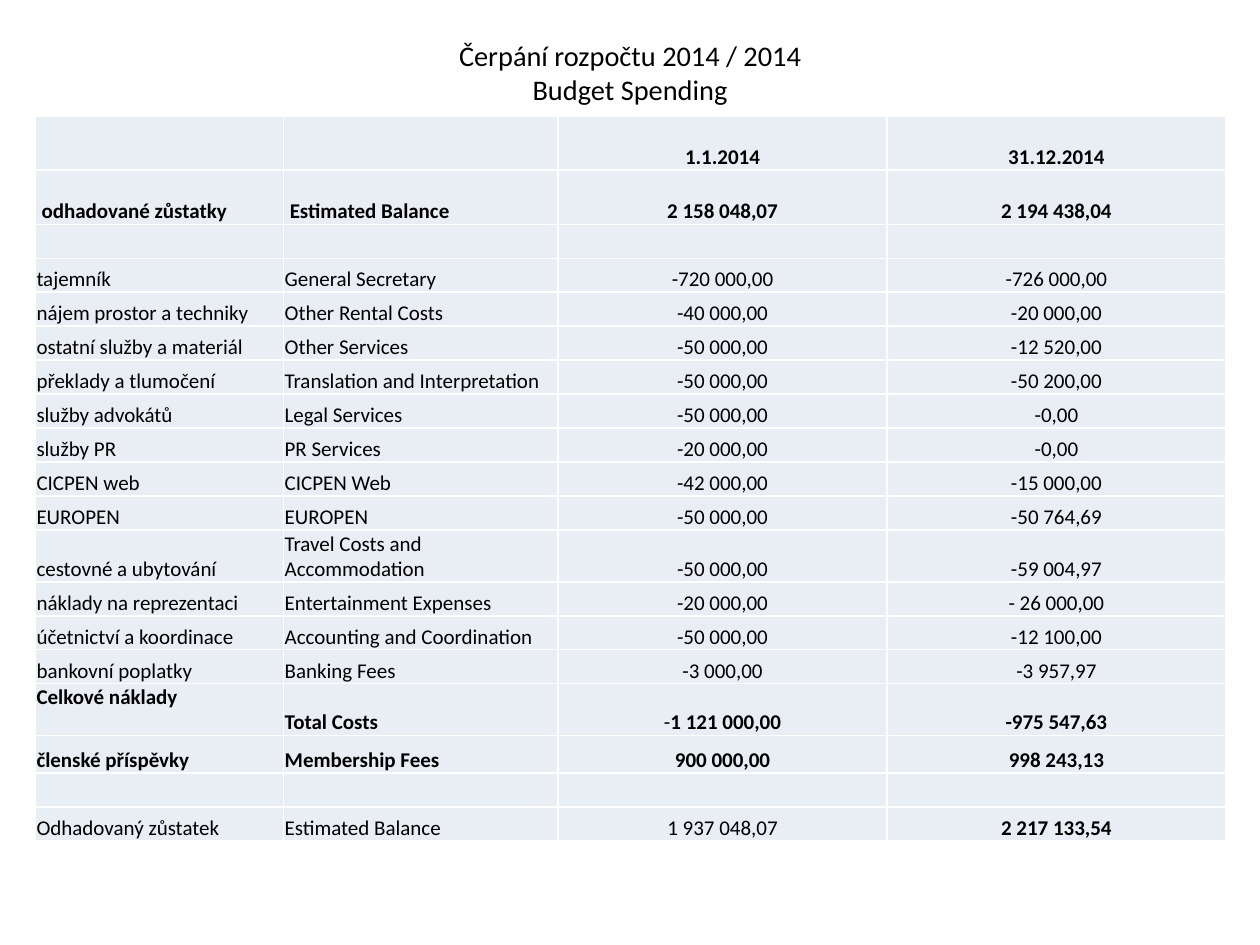
from lxml.etree import SubElement
from pptx import Presentation
from pptx.dml.color import RGBColor
from pptx.enum.text import MSO_ANCHOR as Anchor, PP_ALIGN as Align
from pptx.oxml.ns import qn
from pptx.util import Inches, Pt

BLACK = RGBColor(0x00, 0x00, 0x00)
WHITE = RGBColor(0xFF, 0xFF, 0xFF)
PALE_BLUE = RGBColor(0xE9, 0xED, 0xF4)

# Budget lines: Czech label, English label, start of year, end of year
HEADER = ["", "", "1.1.2014", "31.12.2014"]
OPENING = ["odhadované zůstatky", "Estimated Balance", "2 158 048,07", "2 194 438,04"]
EMPTY = [""] * 4
COSTS = [
    ["tajemník", "General Secretary", "-720 000,00", "-726 000,00"],
    ["nájem prostor a techniky", "Other Rental Costs", "-40 000,00", "-20 000,00"],
    ["ostatní služby a materiál", "Other Services", "-50 000,00", "-12 520,00"],
    ["překlady a tlumočení", "Translation and Interpretation", "-50 000,00", "-50 200,00"],
    ["služby advokátů", "Legal Services", "-50 000,00", "-0,00"],
    ["služby PR", "PR Services", "-20 000,00", "-0,00"],
    ["CICPEN web", "CICPEN Web", "-42 000,00", "-15 000,00"],
    ["EUROPEN", "EUROPEN", "-50 000,00", "-50 764,69"],
    ["cestovné a ubytování", "Travel Costs and Accommodation", "-50 000,00", "-59 004,97"],
    ["náklady na reprezentaci", "Entertainment Expenses", "-20 000,00", "- 26 000,00"],
    ["účetnictví a koordinace", "Accounting and Coordination", "-50 000,00", "-12 100,00"],
    ["bankovní poplatky", "Banking Fees", "-3 000,00", "-3 957,97"],
]
TOTAL = ["Celkové náklady", "Total Costs", "-1 121 000,00", "-975 547,63"]
FEES = ["členské příspěvky", "Membership Fees", "900 000,00", "998 243,13"]
CLOSING = ["Odhadovaný zůstatek", "Estimated Balance", "1 937 048,07", "2 217 133,54"]

ROWS = [HEADER, OPENING, EMPTY, *COSTS, TOTAL, FEES, EMPTY, CLOSING]
BOLD_ROWS = [HEADER, OPENING, TOTAL, FEES]
COLUMN_WIDTHS = [1.97, 2.18, 2.61, 2.69]
ROW_HEIGHT = 0.27
SPECIAL_HEIGHTS = {0: 0.43, 1: 0.43, ROWS.index(TOTAL): 0.41, ROWS.index(FEES): 0.3}


class SlideBuilder:
    font = "Calibri"
    title_size = Pt(16.2)
    cell_size = Pt(12)

    def __init__(self, slide):
        self.slide = slide

    def run(self, paragraph, text, size, bold=False):
        run = paragraph.add_run()
        run.text = text
        run.font.name = self.font
        run.font.size = size
        run.font.bold = bold
        run.font.color.rgb = BLACK

    def title(self, lines, left, top, width, height):
        shape = self.slide.shapes.add_textbox(
            Inches(left), Inches(top), Inches(width), Inches(height))
        frame = shape.text_frame
        frame.word_wrap = True
        frame.vertical_anchor = Anchor.MIDDLE
        frame.margin_top = frame.margin_bottom = 0
        paragraph = frame.paragraphs[0]
        paragraph.alignment = Align.CENTER
        for index, line in enumerate(lines):
            if index:
                paragraph.add_line_break()
            self.run(paragraph, line, self.title_size)

    def table(self, rows, widths, heights, left, top):
        frame = self.slide.shapes.add_table(
            len(rows), len(widths), Inches(left), Inches(top),
            Inches(sum(widths)), Inches(sum(heights)))
        table = frame.table
        table.first_row = table.horz_banding = False
        for column, width in zip(table.columns, widths):
            column.width = Inches(width)
        for row, height in zip(table.rows, heights):
            row.height = Inches(height)
        return table

    def cell(self, cell, runs, alignment, anchor=Anchor.BOTTOM, indent=0.01):
        cell.vertical_anchor = anchor
        cell.margin_left = Inches(indent)
        cell.margin_right = cell.margin_top = Inches(0.01)
        cell.margin_bottom = 0
        self.borders(cell)
        cell.fill.solid()
        cell.fill.fore_color.rgb = PALE_BLUE
        paragraph = cell.text_frame.paragraphs[0]
        paragraph.alignment = alignment
        for text, bold in runs:
            self.run(paragraph, text, self.cell_size, bold)
        if not runs:
            # An empty cell keeps the small text size so its row stays low
            SubElement(paragraph._p, qn("a:endParaRPr"),
                       sz=str(int(self.cell_size.pt * 100)))

    def borders(self, cell):
        properties = cell._tc.get_or_add_tcPr()
        for side in ("lnL", "lnR", "lnT", "lnB"):
            line = SubElement(properties, qn(f"a:{side}"), w=str(Pt(1)))
            fill = SubElement(line, qn("a:solidFill"))
            SubElement(fill, qn("a:srgbClr"), val=str(WHITE))


def cell_runs(row, column):
    text = row[column]
    if row is TOTAL and column == 2:
        return [(text[0], False), (text[1:], True)]
    bold = row in BOLD_ROWS or (row is CLOSING and column == 3)
    return [(text, bold)] if text else []


def main():
    presentation = Presentation()
    presentation.slide_width = Inches(10)
    presentation.slide_height = Inches(7.5)
    builder = SlideBuilder(presentation.slides.add_slide(presentation.slide_layouts[6]))

    # Title
    builder.title(["Čerpání rozpočtu 2014 / 2014", "Budget Spending"], 0.5, 0.3, 9, 0.54)

    # Budget table
    heights = [SPECIAL_HEIGHTS.get(index, ROW_HEIGHT) for index in range(len(ROWS))]
    table = builder.table(ROWS, COLUMN_WIDTHS, heights, 0.28, 0.92)
    for row_index, row in enumerate(ROWS):
        for column in range(len(COLUMN_WIDTHS)):
            is_label = column < 2
            builder.cell(
                table.cell(row_index, column),
                cell_runs(row, column),
                Align.LEFT if is_label else Align.CENTER,
                Anchor.TOP if row is TOTAL and column == 0 else Anchor.BOTTOM,
                0.05 if row is OPENING and is_label else 0.01)

    presentation.save("out.pptx")


if __name__ == "__main__":
    main()
